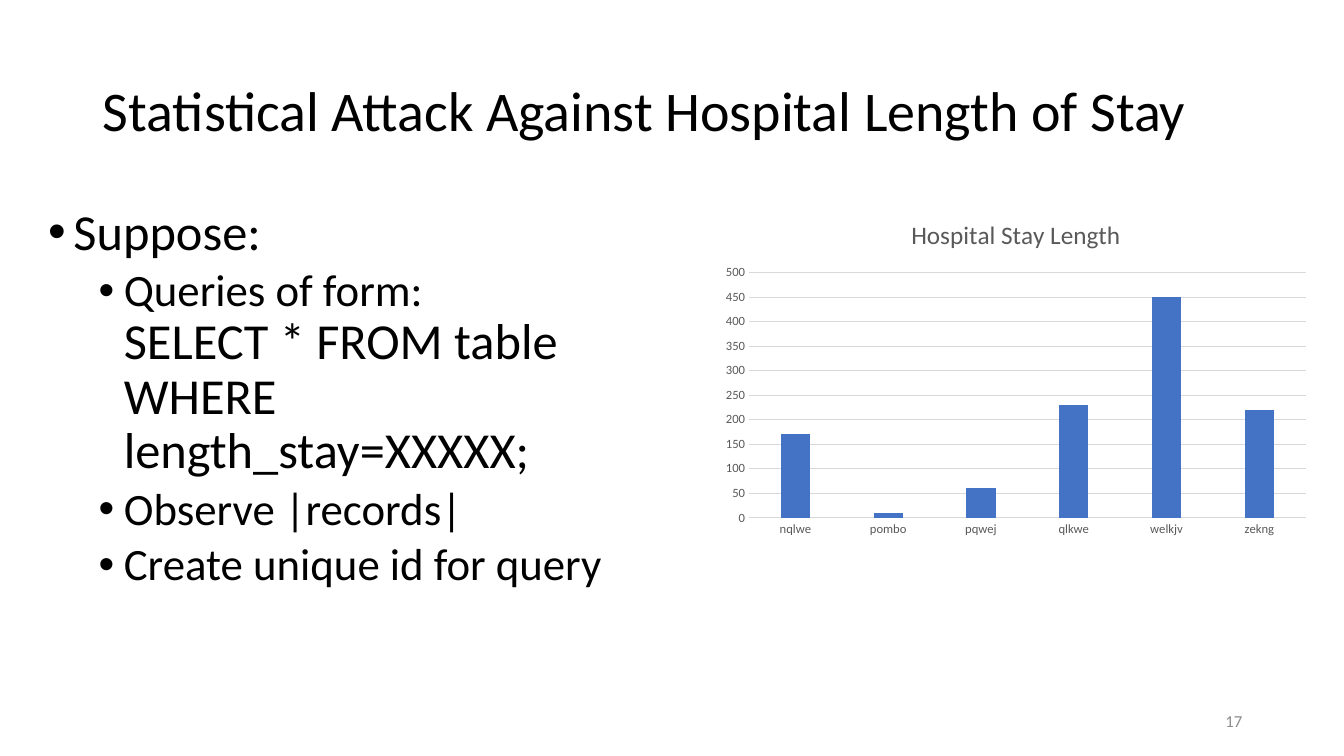
from pptx import Presentation
from pptx.chart.data import CategoryChartData
from pptx.dml.color import RGBColor
from pptx.enum.chart import XL_CHART_TYPE as CHART, XL_TICK_MARK as TICK
from pptx.enum.text import MSO_ANCHOR as ANCHOR, PP_ALIGN as ALIGN
from pptx.oxml.ns import qn
from pptx.util import Inches, Pt
from lxml import etree

COLORS = {"text": "000000", "muted": "8C8C8C", "label": "595959",
          "grid": "D9D9D9", "bar": "4472C4"}


def set_font(font, size, color):
    font.name = "Calibri"
    font.size = Pt(size)
    font.bold = False
    font.color.rgb = RGBColor.from_string(COLORS[color])


def add_text(p, text, size=32, color="text", align=ALIGN.LEFT, before=0,
             spacing=0.9, bullet_indent=None):
    """Write text into a paragraph; bullet_indent is the left margin in inches."""
    p.alignment = align
    p.line_spacing = spacing
    p.space_before = Pt(before)
    if bullet_indent is not None:
        pPr = p._p.get_or_add_pPr()
        pPr.set("marL", str(Inches(bullet_indent)))
        pPr.set("indent", str(Inches(-0.25)))
        if pPr.find(qn("a:buChar")) is None:
            etree.SubElement(pPr, qn("a:buFont")).set("typeface", "Arial")
            etree.SubElement(pPr, qn("a:buChar")).set("char", "•")
    r = p.add_run()
    r.text = text
    set_font(r.font, size, color)


prs = Presentation()
prs.slide_width, prs.slide_height = Inches(13.33), Inches(7.5)
slide = prs.slides.add_slide(prs.slide_layouts[5])

# Title
title = slide.shapes.title
title.left, title.top = Inches(0.92), Inches(0.4)
title.width, title.height = Inches(11.5), Inches(1.45)
title.text_frame.vertical_anchor = ANCHOR.MIDDLE
add_text(title.text_frame.paragraphs[0],
         "Statistical Attack Against Hospital Length of Stay", size=40)

# Bullets
body = slide.shapes.add_textbox(Inches(0.38), Inches(2), Inches(6.09), Inches(4.07))
tf = body.text_frame
tf.word_wrap = True
add_text(tf.paragraphs[0], "Suppose:", size=36, bullet_indent=0.25)
for text in ("Queries of form:", "Observe |records|", "Create unique id for query"):
    p = tf.add_paragraph()
    p.level = 1
    add_text(p, text, before=5, bullet_indent=0.75)
query = tf.paragraphs[1]
query.add_line_break()
add_text(query, "SELECT * FROM table WHERE length_stay=XXXXX;", size=36, before=5)

# Chart
data = CategoryChartData()
data.categories = ["nqlwe", "pombo", "pqwej", "qlkwe", "welkjv", "zekng"]
data.add_series("Series 1", [170, 10, 60, 230, 450, 220])
chart = slide.shapes.add_chart(CHART.COLUMN_CLUSTERED, Inches(7.08), Inches(1.99),
                               Inches(5.99), Inches(3.4), data).chart
set_font(chart.font, 10, "text")
chart.has_legend = False
chart.has_title = True
add_text(chart.chart_title.text_frame.paragraphs[0], "Hospital Stay Length",
         size=18, color="label", align=ALIGN.CENTER, spacing=1)
chart.chart_title.include_in_layout = False

plot = chart.plots[0]
plot.gap_width, plot.overlap = 219, -27
plot.vary_by_categories = False
bars = plot.series[0].format.fill
bars.solid()
bars.fore_color.rgb = RGBColor.from_string(COLORS["bar"])

# Axes
cat_axis, val_axis = chart.category_axis, chart.value_axis
for axis in (cat_axis, val_axis):
    axis.major_tick_mark = axis.minor_tick_mark = TICK.NONE
    set_font(axis.tick_labels.font, 9, "label")
val_axis.minimum_scale, val_axis.maximum_scale, val_axis.major_unit = 0, 500, 50
val_axis.has_major_gridlines = True
val_axis.format.line.fill.background()
for line in (cat_axis.format.line, val_axis.major_gridlines.format.line):
    line.width = Pt(0.75)
    line.color.rgb = RGBColor.from_string(COLORS["grid"])

# Slide number
number = slide.shapes.add_textbox(Inches(9.42), Inches(6.95), Inches(3), Inches(0.4))
number.text_frame.word_wrap = True
number.text_frame.vertical_anchor = ANCHOR.MIDDLE
add_text(number.text_frame.paragraphs[0], "17", size=12, color="muted",
         align=ALIGN.RIGHT, spacing=1)

prs.save("out.pptx")
